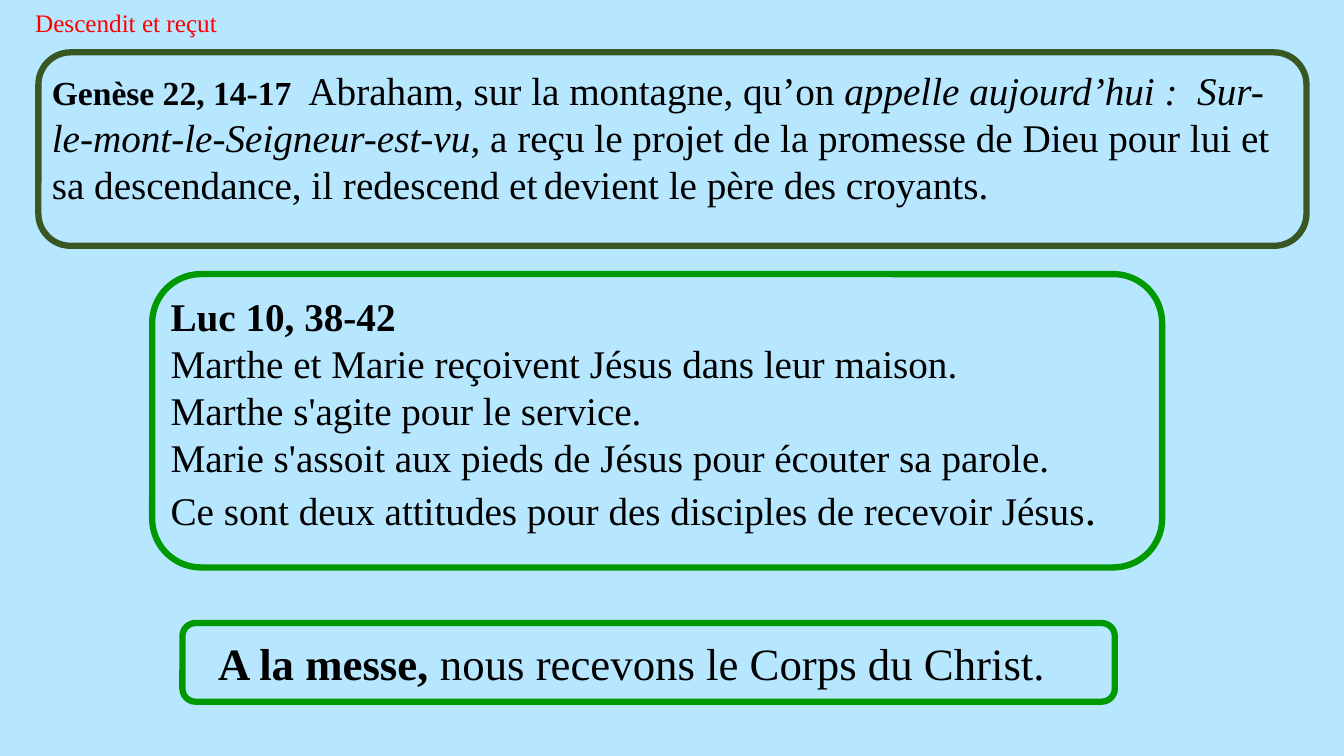
from dataclasses import dataclass

from pptx import Presentation
from pptx.dml.color import RGBColor
from pptx.enum.shapes import MSO_SHAPE
from pptx.enum.text import MSO_ANCHOR, MSO_AUTO_SIZE, PP_ALIGN
from pptx.util import Pt


@dataclass(frozen=True)
class Theme:
    font: str = "Times New Roman"
    sky: str = "B7E7FF"
    ink: str = "000000"
    heading: str = "FF0000"
    green: str = "009900"
    olive: str = "385723"
    small: int = 18
    reference: int = 24
    body: int = 28
    large: int = 32
    border: float = 4.5
    inset: float = 2.88


THEME = Theme()


def add_run(paragraph, text, size=THEME.body, color=THEME.ink, bold=False, italic=False):
    run = paragraph.add_run()
    run.text = text
    run.font.name = THEME.font
    run.font.size = Pt(size)
    run.font.bold = bold
    run.font.italic = italic
    run.font.color.rgb = RGBColor.from_string(color)


def add_frame(slide, left, top, width, height, border_color):
    """Add an unfilled rounded frame and return its text frame."""
    frame = slide.shapes.add_shape(
        MSO_SHAPE.ROUNDED_RECTANGLE, Pt(left), Pt(top), Pt(width), Pt(height))
    frame.shadow.inherit = False
    frame.fill.background()
    frame.line.color.rgb = RGBColor.from_string(border_color)
    frame.line.width = Pt(THEME.border)
    content = frame.text_frame
    content.word_wrap = True
    content.vertical_anchor = MSO_ANCHOR.TOP
    content.margin_left = content.margin_right = Pt(THEME.inset)
    content.margin_top = content.margin_bottom = Pt(THEME.inset)
    content.paragraphs[0].alignment = PP_ALIGN.LEFT
    return content


def add_heading(slide):
    heading = slide.shapes.add_textbox(Pt(18), Pt(1.5), Pt(181.5), Pt(29)).text_frame
    heading.word_wrap = True
    heading.auto_size = MSO_AUTO_SIZE.SHAPE_TO_FIT_TEXT
    add_run(heading.paragraphs[0], "Descendit et reçut", THEME.small, THEME.heading)


def add_genesis(slide):
    verse = add_frame(slide, 27.4, 37.4, 905.8, 138.2, THEME.olive).paragraphs[0]
    verse.space_after = Pt(7.5)
    add_run(verse, "Genèse 22, 14-17  ", THEME.reference, bold=True)
    add_run(verse, "Abraham, sur la montagne, qu’on ")
    add_run(verse, "appelle aujourd’hui :  Sur-le-mont-le-Seigneur-est-vu", italic=True)
    add_run(verse, ", a reçu le projet de la promesse de Dieu pour lui "
                   "et sa descendance, il redescend et")
    add_run(verse, " ", THEME.small)
    add_run(verse, "devient le père des croyants.")


def add_luke(slide):
    gospel = add_frame(slide, 108.7, 195.8, 721.4, 209.5, THEME.green)
    add_run(gospel.paragraphs[0], "Luc 10, 38-42", bold=True)
    for sentence in (
        "Marthe et Marie reçoivent Jésus dans leur maison.",
        "Marthe s'agite pour le service.",
        "Marie s'assoit aux pieds de Jésus pour écouter sa parole.",
        "Ce sont deux attitudes pour des disciples de recevoir Jésus",
    ):
        line = gospel.add_paragraph()
        line.alignment = PP_ALIGN.LEFT
        add_run(line, sentence)
    add_run(line, ".", THEME.large)


def add_mass(slide):
    mass = add_frame(slide, 130.3, 445, 666, 56.2, THEME.green)
    mass.vertical_anchor = MSO_ANCHOR.MIDDLE
    mass.margin_right = Pt(THEME.inset + 24)
    sentence = mass.paragraphs[0]
    sentence.alignment = PP_ALIGN.CENTER
    add_run(sentence, "A la messe, ", THEME.large, bold=True)
    add_run(sentence, "nous recevons le Corps du Christ.", THEME.large)


def main():
    deck = Presentation()
    deck.slide_width, deck.slide_height = Pt(960), Pt(540)
    slide = deck.slides.add_slide(deck.slide_layouts[6])
    slide.background.fill.solid()
    slide.background.fill.fore_color.rgb = RGBColor.from_string(THEME.sky)
    add_luke(slide)
    add_mass(slide)
    add_genesis(slide)
    add_heading(slide)
    deck.save("out.pptx")


if __name__ == "__main__":
    main()
